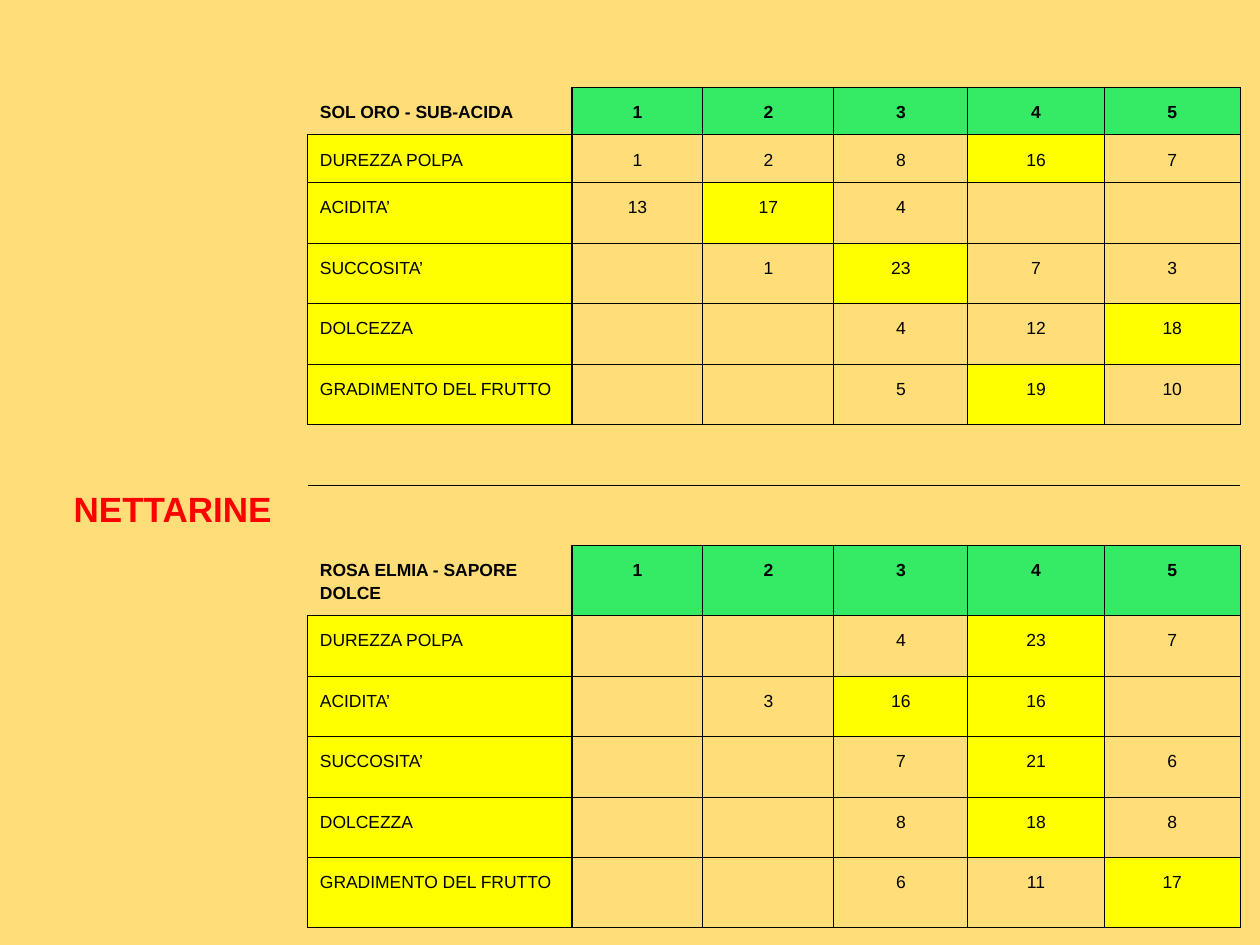
from dataclasses import dataclass

from lxml.etree import SubElement
from pptx import Presentation
from pptx.dml.color import RGBColor
from pptx.enum.text import MSO_ANCHOR, PP_ALIGN
from pptx.oxml.ns import qn
from pptx.util import Cm, Pt

SCORES = ["1", "2", "3", "4", "5"]
FIRST_VARIETY = ("SOL ORO - SUB-ACIDA", [
    ("DUREZZA POLPA", [1, 2, 8, 16, 7]),
    ("ACIDITA’", [13, 17, 4, None, None]),
    ("SUCCOSITA’", [None, 1, 23, 7, 3]),
    ("DOLCEZZA", [None, None, 4, 12, 18]),
    ("GRADIMENTO DEL FRUTTO", [None, None, 5, 19, 10]),
])
SECOND_VARIETY = ("ROSA ELMIA - SAPORE DOLCE", [
    ("DUREZZA POLPA", [None, None, 4, 23, 7]),
    ("ACIDITA’", [None, 3, 16, 16, None]),
    ("SUCCOSITA’", [None, None, 7, 21, 6]),
    ("DOLCEZZA", [None, None, 8, 18, 8]),
    ("GRADIMENTO DEL FRUTTO", [None, None, 6, 11, 17]),
])
SECOND_START = 8
COLUMN_WIDTHS = [5.44, 5.33, 2.64, 2.64, 2.7, 2.75, 2.74]
ROW_HEIGHTS = [0.96] * 2 + [1.22] * 6 + [1.41] + [1.22] * 4 + [1.41]
NO_STYLE_NO_GRID = "{2D5ABB26-0587-4C30-8999-92F81FD0307C}"


@dataclass
class Theme:
    background: str = "FFDD78"
    header: str = "35EB65"
    highlight: str = "FFFF00"
    title: str = "FF0000"
    ink: str = "000000"
    font: str = "Arial"
    title_size: int = 20
    text_size: int = 10
    line_width: float = 0.75


class SlideBuilder:
    def __init__(self, slide, theme):
        self.slide = slide
        self.theme = theme

    def background(self):
        fill = self.slide.background.fill
        fill.solid()
        fill.fore_color.rgb = RGBColor.from_string(self.theme.background)

    def table(self, left, top, widths, heights):
        frame = self.slide.shapes.add_table(
            len(heights), len(widths), Cm(left), Cm(top),
            Cm(sum(widths)), Cm(sum(heights)))
        table = frame.table
        table.first_row = table.horz_banding = False
        table._tbl.tblPr.find(qn("a:tableStyleId")).text = NO_STYLE_NO_GRID
        for column, width in zip(table.columns, widths):
            column.width = Cm(width)
        for row, height in zip(table.rows, heights):
            row.height = Cm(height)
        return table

    def borders(self, cell, sides):
        """Draw the sides named by the letters L, R, T and B; clear the others."""
        properties = cell._tc.get_or_add_tcPr()
        for side in "LRTB":
            line = SubElement(properties, qn(f"a:ln{side}"),
                              w=str(Pt(self.theme.line_width)))
            if side in sides:
                solid = SubElement(line, qn("a:solidFill"))
                SubElement(solid, qn("a:srgbClr"), val=self.theme.ink)
            else:
                SubElement(line, qn("a:noFill"))

    def cell(self, cell, text="", sides="LRTB", fill=None, color=None,
             size=None, bold=False, align=PP_ALIGN.CENTER):
        self.borders(cell, sides)
        if fill:
            cell.fill.solid()
            cell.fill.fore_color.rgb = RGBColor.from_string(fill)
        if not text:
            return
        for side in ("left", "right", "top", "bottom"):
            setattr(cell, f"margin_{side}", Cm(0.25))
        paragraph = cell.text_frame.paragraphs[0]
        paragraph.alignment = align
        paragraph.line_spacing = 1.15
        run = paragraph.add_run()
        run.text = text
        formats = {"name": self.theme.font, "bold": bold,
                   "size": Pt(size or self.theme.text_size)}
        for name, value in formats.items():
            setattr(run.font, name, value)
        run.font.color.rgb = RGBColor.from_string(color or self.theme.ink)

    def category(self, table, text):
        first = table.cell(0, 0)
        first.merge(table.cell(len(table.rows) - 1, 0))
        first.vertical_anchor = MSO_ANCHOR.MIDDLE
        self.cell(first, text, sides="", color=self.theme.title,
                  size=self.theme.title_size, bold=True)

    def variety(self, table, start, name, ratings):
        """Fill one block of ratings, marking the highest count in each row."""
        theme = self.theme
        self.cell(table.cell(start, 1), name, sides="RB", bold=True,
                  align=PP_ALIGN.LEFT)
        for column, score in enumerate(SCORES, 2):
            self.cell(table.cell(start, column), score, fill=theme.header,
                      bold=True)
        for row, (label, counts) in enumerate(ratings, start + 1):
            self.cell(table.cell(row, 1), label, fill=theme.highlight,
                      align=PP_ALIGN.LEFT)
            highest = max(count for count in counts if count is not None)
            for column, count in enumerate(counts, 2):
                self.cell(table.cell(row, column),
                          "" if count is None else str(count),
                          fill=theme.highlight if count == highest else None)

    def spacer(self, table, row):
        """Rule off the two rows that separate the blocks."""
        for column in range(1, len(table.columns)):
            self.cell(table.cell(row, column), sides="TB")
            self.cell(table.cell(row + 1, column),
                      sides="T" if column == 1 else "TB")


def main():
    presentation = Presentation()
    presentation.slide_width = Cm(25.4)
    presentation.slide_height = Cm(19.05)
    slide = presentation.slides.add_slide(presentation.slide_layouts[6])
    builder = SlideBuilder(slide, Theme())
    builder.background()
    table = builder.table(0.76, 1.76, COLUMN_WIDTHS, ROW_HEIGHTS)
    builder.category(table, "NETTARINE")
    builder.variety(table, 0, *FIRST_VARIETY)
    builder.spacer(table, SECOND_START - 2)
    builder.variety(table, SECOND_START, *SECOND_VARIETY)
    presentation.save("out.pptx")


if __name__ == "__main__":
    main()
